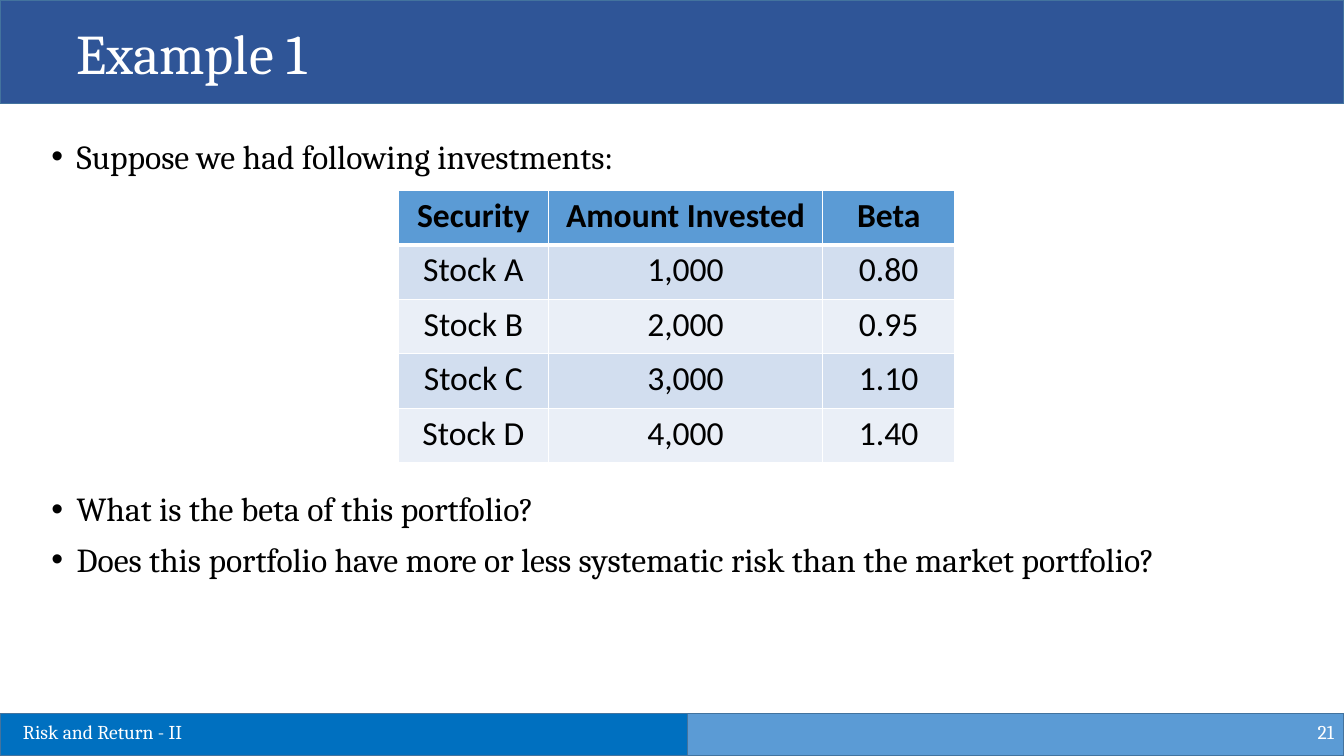
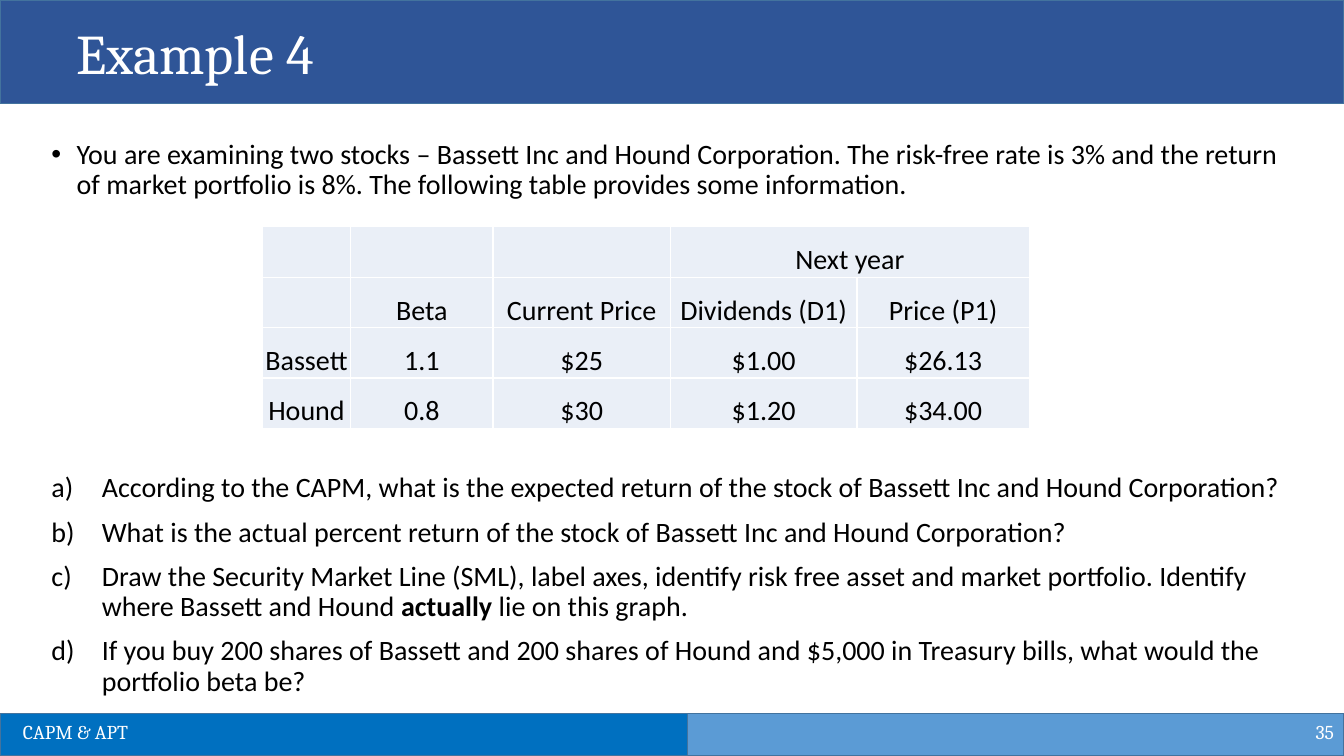
from lxml import etree
from pptx import Presentation, util as u
from pptx.dml.color import RGBColor
from pptx.enum import shapes, text
from pptx.oxml.ns import qn

WIDE, HIGH = 13.33, 7.5
NAVY, BLUE, SKY, EDGE = "2F5597", "0070C0", "5B9BD5", "43739E"
PALE, MIST, WHITE, BLACK = "D2DEEF", "EAEFF7", "FFFFFF", "000000"
SERIF, SANS = "Cambria", "Calibri"
LEFT, MID, RIGHT = text.PP_ALIGN.LEFT, text.PP_ALIGN.CENTER, text.PP_ALIGN.RIGHT
BULLET = ("buChar", "char", "•", 0.25)
LETTER = ("buAutoNum", "type", "alphaLcParenR", 0.5)


def color(code):
    return RGBColor.from_string(code)


def place(shape, left, top, width, height):
    shape.left, shape.top = u.Inches(left), u.Inches(top)
    shape.width, shape.height = u.Inches(width), u.Inches(height)


def style(para, face, size, code, align=LEFT, bold=False):
    para.alignment = align
    font = para.font
    font.name, font.size, font.bold = face, u.Pt(size), bold
    font.color.rgb = color(code)


def band(slide, left, top, width, height, code):
    bar = slide.shapes.add_shape(
        shapes.MSO_SHAPE.RECTANGLE, *map(u.Inches, (left, top, width, height)))
    bar.shadow.inherit = False
    bar.fill.solid()
    bar.fill.fore_color.rgb = color(code)
    bar.line.color.rgb = color(EDGE)
    bar.line.width = u.Pt(1)
    return bar


def label(slide, words, left, top, width, height, align):
    box = slide.shapes.add_textbox(*map(u.Inches, (left, top, width, height)))
    frame = box.text_frame
    frame.word_wrap = True
    frame.vertical_anchor = text.MSO_ANCHOR.MIDDLE
    frame.text = words
    style(frame.paragraphs[0], SERIF, 14, WHITE, align)


def page(deck, title, footer, number):
    slide = deck.slides.add_slide(deck.slide_layouts[1])
    bar = band(slide, 0, 0, WIDE, 1.03, NAVY).element
    bar.getparent().insert(2, bar)
    head = slide.shapes.title
    place(head, 0.66, 0.13, 12.08, 0.77)
    frame = head.text_frame
    frame.auto_size = text.MSO_AUTO_SIZE.NONE
    frame.vertical_anchor = text.MSO_ANCHOR.MIDDLE
    frame.text = title
    style(frame.paragraphs[0], SERIF, 40, WHITE)
    split = 6.82
    band(slide, 0, 7.08, split, 0.42, BLUE)
    band(slide, split, 7.08, WIDE - split, 0.42, SKY)
    label(slide, str(number), WIDE - 3, 7.06, 3, 0.4, RIGHT)
    label(slide, footer, 0.13, 7.09, 5.54, 0.34, LEFT)
    return slide


def mark(para, kind):
    tag, key, value, indent = kind
    props = para._p.get_or_add_pPr()
    props.set("marL", str(u.Inches(indent)))
    props.set("indent", str(u.Inches(-indent)))
    etree.SubElement(props, qn("a:" + tag)).set(key, value)


def body(slide, face, size, gap, intro, items, kind):
    holder = slide.placeholders[1]
    place(holder, 0.41, 1.34, 12.59, 5.7)
    frame = holder.text_frame
    frame.auto_size = text.MSO_AUTO_SIZE.NONE
    for index, words in enumerate([intro] + items):
        para = frame.add_paragraph() if index else frame.paragraphs[0]
        para.line_spacing = 0.9
        para.space_before = u.Pt(gap if index == 1 else 10)
        mark(para, kind if index else BULLET)
        style(para, face, size, BLACK)
        for turn, part in enumerate(words.split("*")):
            run = para.add_run()
            run.text = part
            if turn % 2:
                run.font.bold = True


def border(cell, top, bottom):
    props = cell._tc.get_or_add_tcPr()
    for side, width in zip("LRTB", (1, 1, top, bottom)):
        line = etree.SubElement(props, qn("a:ln" + side), w=str(u.Pt(width)))
        fill = etree.SubElement(line, qn("a:solidFill"))
        etree.SubElement(fill, qn("a:srgbClr"), val=WHITE)


def table(slide, left, top, widths, height, rows, size, fills, header=False, tight=False):
    grid = slide.shapes.add_table(
        len(rows), len(widths), u.Inches(left), u.Inches(top),
        u.Inches(sum(widths)), u.Inches(height * len(rows))).table
    grid.first_row = grid.horz_banding = False
    for column, width in zip(grid.columns, widths):
        column.width = u.Inches(width)
    for r, row in enumerate(rows):
        for c, words in enumerate(row):
            cell = grid.cell(r, c)
            border(cell, 3 if header and r == 1 else 1, 3 if header and r == 0 else 1)
            cell.fill.solid()
            cell.fill.fore_color.rgb = color(fills[r])
            if tight:
                cell.vertical_anchor = text.MSO_ANCHOR.BOTTOM
                cell.margin_left = cell.margin_right = cell.margin_top = u.Inches(0.01)
                cell.margin_bottom = 0
            if words:
                cell.text = words
                para = cell.text_frame.paragraphs[0]
                para.line_spacing = 1.15 if tight else 1.0
                style(para, SANS, size, BLACK, MID, header and r == 0)
    return grid


def beta(deck):
    slide = page(deck, "Example 1", "Risk and Return - II", 21)
    body(slide, SERIF, 24, 226, "Suppose we had following investments:", [
        "What is the beta of this portfolio?",
        "Does this portfolio have more or less systematic risk than the market portfolio?",
    ], BULLET)
    table(slide, 3.95, 1.89, (1.49, 2.72, 1.31), 0.54, [
        ("Security", "Amount Invested", "Beta"),
        ("Stock A", "1,000", "0.80"),
        ("Stock B", "2,000", "0.95"),
        ("Stock C", "3,000", "1.10"),
        ("Stock D", "4,000", "1.40"),
    ], 24, [SKY] + [PALE, MIST] * 2, header=True)


def market(deck):
    slide = page(deck, "Example 4", "CAPM & APT", 35)
    body(slide, SANS, 20, 195,
         "You are examining two stocks – Bassett Inc and Hound Corporation. "
         "The risk-free rate is 3% and the return of market portfolio is 8%. "
         "The following table provides some information.", [
             "According to the CAPM, what is the expected return of the stock of "
             "Bassett Inc and Hound Corporation?",
             "What is the actual percent return of the stock of Bassett Inc and "
             "Hound Corporation?",
             "Draw the Security Market Line (SML), label axes, identify risk free "
             "asset and market portfolio. Identify where Bassett and Hound "
             "*actually* lie on this graph.",
             "If you buy 200 shares of Bassett and 200 shares of Hound and $5,000 "
             "in Treasury bills, what would the portfolio beta be?",
         ], LETTER)
    grid = table(slide, 2.6, 2.25, (0.88, 1.41, 1.76, 1.85, 1.71), 0.5, [
        ("", "", "", "Next year", ""),
        ("", "Beta", "Current Price", "Dividends (D1)", "Price (P1)"),
        ("Bassett", "1.1", "$25", "$1.00", "$26.13"),
        ("Hound", "0.8", "$30", "$1.20", "$34.00"),
    ], 20, [MIST] * 4, tight=True)
    grid.cell(0, 3).merge(grid.cell(0, 4))


def main():
    deck = Presentation()
    deck.slide_width, deck.slide_height = u.Inches(WIDE), u.Inches(HIGH)
    beta(deck)
    market(deck)
    deck.save("out.pptx")


if __name__ == "__main__":
    main()
